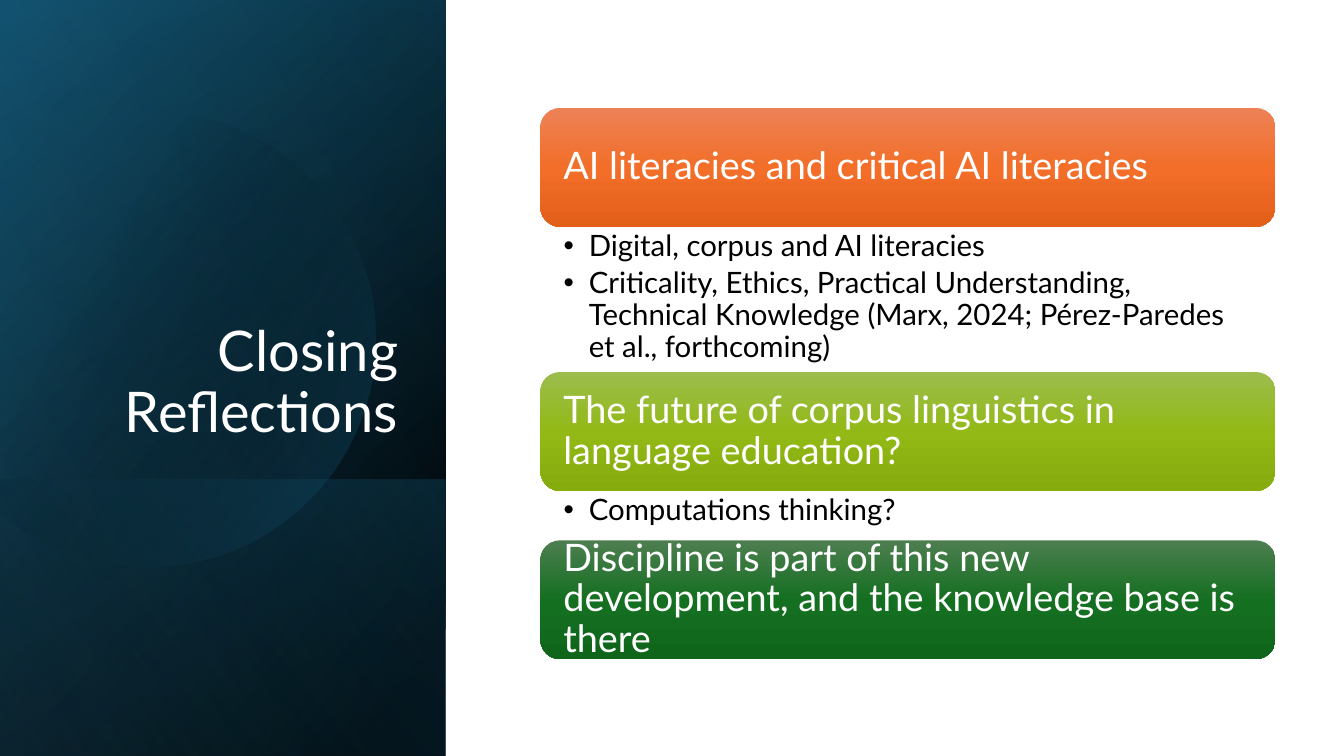
import math
from dataclasses import dataclass
from lxml import etree
from pptx import Presentation
from pptx.dml.color import RGBColor
from pptx.enum import shapes as shp, text as txt
from pptx.oxml.ns import qn
from pptx.util import Emu, Pt

PX = 9144  # 100 px to the inch
FONT = "Lato"
WHITE = RGBColor(0xFF, 0xFF, 0xFF)
BLACK = RGBColor(0, 0, 0)
NAVY = RGBColor(0x10, 0x48, 0x62)
TEAL = RGBColor(0x15, 0x60, 0x82)
SKY = RGBColor(0x46, 0xB1, 0xE1)
ORANGES = (RGBColor(0xED, 0x82, 0x57), RGBColor(0xF2, 0x6E, 0x29), RGBColor(0xE2, 0x5F, 0x1A))
LIMES = (RGBColor(0x9C, 0xBD, 0x4E), RGBColor(0x92, 0xB9, 0x16), RGBColor(0x85, 0xAB, 0x0D))
GREENS = (RGBColor(0x4D, 0x7E, 0x50), RGBColor(0x15, 0x6F, 0x21), RGBColor(0x0F, 0x66, 0x1B))


@dataclass
class Stop:
    position: int
    color: RGBColor
    opacity: int = 100


@dataclass
class Panel:
    top: int
    height: int
    angle: int
    stops: tuple[Stop, ...]


@dataclass
class Card:
    top: int
    heading: str
    colors: tuple[RGBColor, ...]


@dataclass
class Points:
    top: int
    height: int
    lines: tuple[str, ...]


PANEL_WIDTH, SLIDE_HEIGHT = 442, 750
BACK_PANELS = (
    Panel(0, SLIDE_HEIGHT, 50, (Stop(8, BLACK), Stop(100, NAVY))),
    Panel(0, SLIDE_HEIGHT, 30, (Stop(0, BLACK, 0), Stop(99, TEAL, 46))),
    Panel(476, 274, 130, (Stop(2, TEAL, 29), Stop(100, BLACK, 30))),
)
GLOW_PANEL = Panel(0, SLIDE_HEIGHT, 120, (Stop(0, BLACK, 0), Stop(99, SKY, 11)))
DISC_STOPS = (Stop(29, BLACK, 0), Stop(100, TEAL, 43))

CARD_LEFT, CARD_WIDTH, CARD_HEIGHT = 536, 729, 118
CARDS = (
    Card(107, "AI literacies and critical AI literacies", ORANGES),
    Card(369, "The future of corpus linguistics in language education?", LIMES),
    Card(536, "Discipline is part of this new development, "
              "and the knowledge base is there", GREENS),
)
LISTS = (
    Points(225, 144, (
        "Digital, corpus and AI literacies",
        "Criticality, Ethics, Practical Understanding, Technical Knowledge "
        "(Marx, 2024; Pérez-Paredes et al., forthcoming)")),
    Points(487, 49, ("Computations thinking?",)),
)


def px(*lengths: int) -> list[Emu]:
    return [Emu(length * PX) for length in lengths]


def paint(shape, stops: tuple[Stop, ...], angle: int) -> None:
    """Give a shape a clockwise linear gradient and no outline or shadow."""
    shape.shadow.inherit = False
    shape.line.fill.background()
    shape.fill.gradient()
    shape.fill.gradient_angle = (360 - angle) % 360
    stop_list = shape._element.spPr.find(qn("a:gradFill")).find(qn("a:gsLst"))
    stop_list.clear()
    for stop in stops:
        mark = etree.SubElement(stop_list, qn("a:gs"), pos=str(stop.position * 1000))
        color = etree.SubElement(mark, qn("a:srgbClr"), val=str(stop.color))
        if stop.opacity < 100:
            etree.SubElement(color, qn("a:alpha"), val=str(stop.opacity * 1000))


def write(shape, *lines: str, size: int, color: RGBColor = WHITE,
          align=txt.PP_ALIGN.LEFT, anchor=txt.MSO_ANCHOR.MIDDLE,
          margins: tuple[int, int, int, int] = (17, 17, 17, 17),
          gap: int = 0, indent: int = 0) -> None:
    frame = shape.text_frame
    frame.word_wrap = True
    frame.auto_size = txt.MSO_AUTO_SIZE.NONE
    frame.vertical_anchor = anchor
    (frame.margin_left, frame.margin_top,
     frame.margin_right, frame.margin_bottom) = px(*margins)
    for number, line in enumerate(lines):
        paragraph = frame.add_paragraph() if number else frame.paragraphs[0]
        paragraph.text = line
        paragraph.alignment = align
        paragraph.line_spacing = 0.9
        paragraph.space_before = Pt(0)
        paragraph.space_after = Pt(gap)
        if indent:
            properties = paragraph._p.get_or_add_pPr()
            properties.set("marL", str(indent * PX))
            properties.set("indent", str(-indent * PX))
            etree.SubElement(properties, qn("a:buChar"), char="•")
        font = paragraph.font
        font.name, font.size, font.color.rgb = FONT, Pt(size), color


def place(shape, left: int, top: int, width: int, height: int) -> None:
    shape.left, shape.top, shape.width, shape.height = px(left, top, width, height)


def draw_panel(slide, panel: Panel) -> None:
    """Draw a mirrored rectangle on its side, centred on the area it covers."""
    left = (PANEL_WIDTH - panel.height) // 2
    top = panel.top + (panel.height - PANEL_WIDTH) // 2
    shape = slide.shapes.add_shape(
        shp.MSO_SHAPE.RECTANGLE, *px(left, top, panel.height, PANEL_WIDTH))
    shape.rotation = 90
    shape._element.spPr.find(qn("a:xfrm")).set("flipH", "1")
    paint(shape, panel.stops, panel.angle)


def draw_disc(slide, center_x: int, center_y: int, radius: int) -> None:
    """Draw a disc cut off by the slide's left edge."""
    reach = math.acos(-center_x / radius)
    steps = 90
    angles = [reach * (2 * step / steps - 1) for step in range(steps + 1)]
    rim = [((center_x + radius * math.cos(a)) * PX,
            (center_y + radius * math.sin(a)) * PX) for a in angles]
    builder = slide.shapes.build_freeform(*rim[0])
    builder.add_line_segments(rim[1:], close=True)
    paint(builder.convert_to_shape(), DISC_STOPS, 30)


def draw_card(slide, card: Card) -> None:
    shape = slide.shapes.add_shape(
        shp.MSO_SHAPE.ROUNDED_RECTANGLE, *px(CARD_LEFT, card.top, CARD_WIDTH, CARD_HEIGHT))
    paint(shape, tuple(Stop(50 * i, color) for i, color in enumerate(card.colors)), 90)
    write(shape, card.heading, size=27)


def main() -> None:
    deck = Presentation()
    deck.slide_width, deck.slide_height = px(1333, SLIDE_HEIGHT)
    slide = deck.slides.add_slide(deck.slide_layouts.get_by_name("Two Content"))
    title, *bodies = slide.placeholders

    # Dark side panel
    for panel in BACK_PANELS:
        draw_panel(slide, panel)
    draw_disc(slide, 146, 336, 226)
    draw_panel(slide, GLOW_PANEL)

    # Title, brought in front of the panel
    place(title, 64, 184, 341, 262)
    write(title, "Closing Reflections", size=40, align=txt.PP_ALIGN.RIGHT,
          anchor=txt.MSO_ANCHOR.BOTTOM, margins=(10, 5, 10, 5))
    title._element.getparent().append(title._element)

    # Cards and the lists under them
    for card in CARDS:
        draw_card(slide, card)
    for body, points in zip(bodies, LISTS):
        place(body, CARD_LEFT, points.top, CARD_WIDTH, points.height)
        write(body, *points.lines, size=21, color=BLACK, anchor=txt.MSO_ANCHOR.TOP,
              margins=(23, 4, 21, 4), gap=4, indent=25)

    deck.save("out.pptx")


if __name__ == "__main__":
    main()
